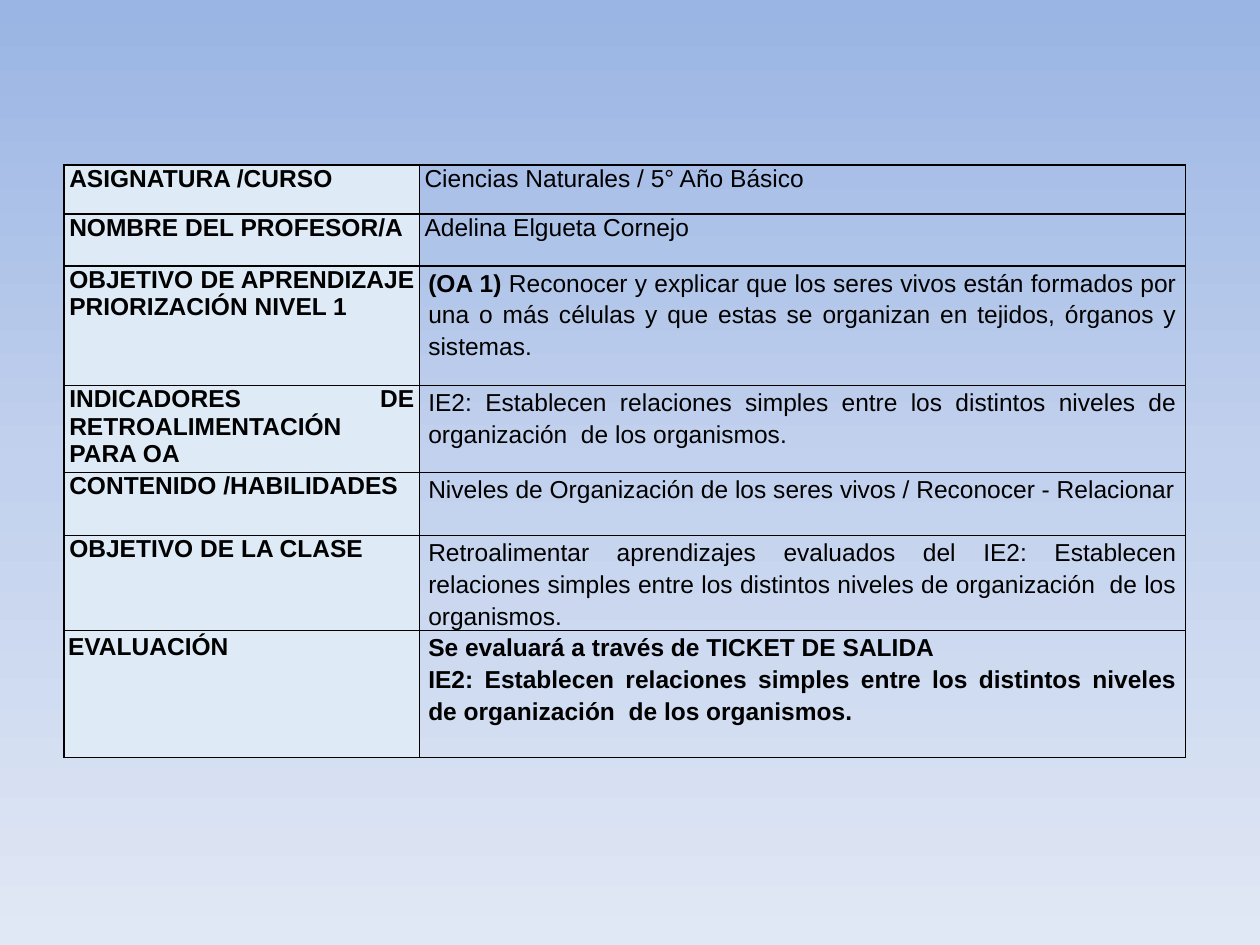
from copy import deepcopy

from lxml import etree
from pptx import Presentation
from pptx import util as u
from pptx.dml.color import RGBColor
from pptx.enum import text
from pptx.oxml import ns

THEME = {
    "font": {"name": "Arial", "size": u.Pt(14)},
    "ink": "000000",
    "label_fill": "DEEAF6",
    "background": [(0, "9AB5E4"), (0.5, "C2D1ED"), (1, "E1E8F5")],
    "border": u.Pt(1),
}

COLUMNS = [2.82, 6.08]
INDICATOR = ("IE2: Establecen relaciones simples entre los distintos niveles "
             "de organización  de los organismos.")

# Cell formats: horizontal and vertical margins in inches, line spacing
LABEL = {"x": 0.04, "y": 0, "spacing": 1.0}
LAST_LABEL = {"x": 0.03, "y": 0.02, "spacing": 1.0}
BODY = {"x": 0.07, "y": 0, "spacing": 1.15}

# Row height, label, label format, paragraphs of (text, bold) runs, body format
ROWS = [
    (0.39, "ASIGNATURA /CURSO", LABEL,
     [[("Ciencias Naturales / 5° Año Básico", False)]], LABEL),
    (0.41, "NOMBRE DEL PROFESOR/A", LABEL,
     [[("Adelina Elgueta Cornejo", False)]], LABEL),
    (0.95, "OBJETIVO DE APRENDIZAJE PRIORIZACIÓN NIVEL 1", LABEL,
     [[("(OA 1) ", True),
       ("Reconocer y explicar que los seres vivos están formados por una o más "
        "células y que estas se organizan en tejidos, órganos y sistemas.", False)]],
     BODY),
    (0.69, "INDICADORES DE RETROALIMENTACIÓN PARA OA", LABEL,
     [[(INDICATOR, False)]], BODY),
    (0.5, "CONTENIDO /HABILIDADES", LABEL,
     [[("Niveles de Organización de los seres vivos / Reconocer - Relacionar",
        False)]], BODY),
    (0.75, "OBJETIVO DE LA CLASE", LABEL,
     [[("Retroalimentar aprendizajes evaluados del " + INDICATOR, False)]], BODY),
    (1.01, "EVALUACIÓN", LAST_LABEL,
     [[("Se evaluará a través de TICKET DE SALIDA", True)],
      [(INDICATOR, True)]], BODY),
]


def set_attributes(obj, values):
    for name, value in values.items():
        setattr(obj, name, value)


def set_background(slide):
    fill = slide.background.fill
    fill.gradient()
    fill.gradient_angle = 270
    # The default gradient has two stops; add the middle one
    stops = next(slide.element.iter(ns.qn("a:gsLst")))
    stops.insert(1, deepcopy(stops[0]))
    for stop, (position, color) in zip(fill.gradient_stops, THEME["background"]):
        stop.position = position
        stop.color.rgb = RGBColor.from_string(color)


def set_borders(cell):
    props = cell._tc.get_or_add_tcPr()
    for i, side in enumerate(("lnL", "lnR", "lnT", "lnB")):
        line = etree.Element(ns.qn(f"a:{side}"), w=str(THEME["border"]))
        solid = etree.SubElement(line, ns.qn("a:solidFill"))
        etree.SubElement(solid, ns.qn("a:srgbClr"), val=THEME["ink"])
        props.insert(i, line)


def fill_cell(cell, paragraphs, style, color=None):
    x, y = u.Inches(style["x"]), u.Inches(style["y"])
    set_attributes(cell, {"margin_left": x, "margin_right": x,
                          "margin_top": y, "margin_bottom": y})
    if color:
        cell.fill.solid()
        cell.fill.fore_color.rgb = RGBColor.from_string(color)
    else:
        cell.fill.background()
    set_borders(cell)

    tf = cell.text_frame
    for i, runs in enumerate(paragraphs):
        p = tf.add_paragraph() if i else tf.paragraphs[0]
        set_attributes(p, {"alignment": text.PP_ALIGN.JUSTIFY,
                           "line_spacing": style["spacing"]})
        for words, bold in runs:
            r = p.add_run()
            r.text = words
            set_attributes(r.font, {**THEME["font"], "bold": bold})
            r.font.color.rgb = RGBColor.from_string(THEME["ink"])


def add_lesson_table(slide):
    height = sum(row[0] for row in ROWS)
    table = slide.shapes.add_table(
        len(ROWS), len(COLUMNS), u.Inches(0.51), u.Inches(1.31),
        u.Inches(sum(COLUMNS)), u.Inches(height)).table
    set_attributes(table, {"first_row": False, "horz_banding": False})
    for column, width in zip(table.columns, COLUMNS):
        column.width = u.Inches(width)
    for row, (height, label, label_style, body, body_style) in zip(table.rows, ROWS):
        row.height = u.Inches(height)
        fill_cell(row.cells[0], [[(label, True)]], label_style, THEME["label_fill"])
        fill_cell(row.cells[1], body, body_style)


def main():
    prs = Presentation()
    set_attributes(prs, {"slide_width": u.Inches(10), "slide_height": u.Inches(7.5)})
    slide = prs.slides.add_slide(prs.slide_layouts[6])
    set_background(slide)
    add_lesson_table(slide)
    prs.save("out.pptx")


if __name__ == "__main__":
    main()
